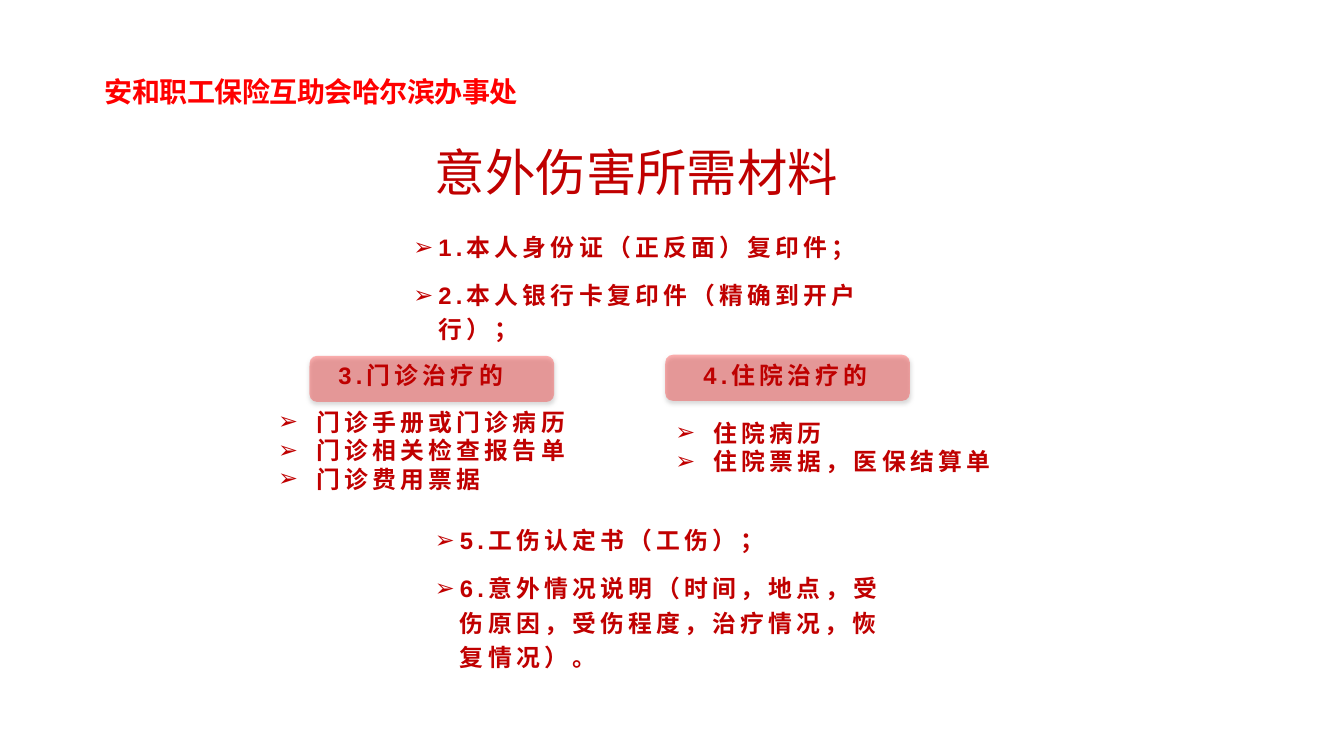
import lxml.etree
import pptx
import pptx.dml.color
import pptx.enum.shapes
import pptx.enum.text
import pptx.oxml.ns
import pptx.util

RED = "C00000"
CHINESE_FONT = "Noto Sans CJK SC"


def colour(value):
    return pptx.dml.color.RGBColor.from_string(value)


def add_element(parent, tag, **attributes):
    element = lxml.etree.SubElement(parent, pptx.oxml.ns.qn(tag))
    for name, value in attributes.items():
        element.set(name, str(value))
    return element


def add_shadow(parent, blur, distance, opacity):
    effects = add_element(parent, "a:effectLst")
    shadow = add_element(effects, "a:outerShdw", blurRad=pptx.util.Pt(blur),
                         dist=pptx.util.Pt(distance), dir=5400000, algn="t", rotWithShape=0)
    black = add_element(shadow, "a:srgbClr", val="000000")
    add_element(black, "a:alpha", val=opacity * 1000)
    return effects


class SlideBuilder:
    """Places elements by percentages of the slide's width and height."""

    def __init__(self, presentation, layout):
        self.presentation = presentation
        self.slide = presentation.slides.add_slide(layout)

    def lengths(self, box):
        width, height = self.presentation.slide_width, self.presentation.slide_height
        return [round(share * whole / 100) for share, whole in zip(box, (width, height) * 2)]

    def text(self, shape, lines, size=17, font="Arial", text_colour=RED, bold=True,
             tracking=3, line_spacing=1.0, gap=0, indent=None):
        frame = shape.text_frame
        frame.text = "\n".join(lines)
        frame.word_wrap = True
        frame.auto_size = pptx.enum.text.MSO_AUTO_SIZE.NONE
        frame.vertical_anchor = pptx.enum.text.MSO_ANCHOR.TOP
        for number, paragraph in enumerate(frame.paragraphs):
            paragraph.alignment = pptx.enum.text.PP_ALIGN.LEFT
            paragraph.line_spacing = line_spacing
            paragraph.space_before = pptx.util.Pt(gap if number else 0)
            properties = paragraph._p.get_or_add_pPr()
            if indent:
                properties.set("marL", str(pptx.util.Inches(indent)))
                properties.set("indent", str(-pptx.util.Inches(indent)))
                add_element(properties, "a:buFont", typeface="Arial")
                add_element(properties, "a:buChar", char="➢")
            paragraph.font.size = pptx.util.Pt(size)
            paragraph.font.bold = bold
            paragraph.font.name = font
            paragraph.font.color.rgb = colour(text_colour)
            defaults = properties.find(pptx.oxml.ns.qn("a:defRPr"))
            defaults.set("spc", str(round(tracking * 100)))
            add_element(defaults, "a:ea", typeface=font)

    def place(self, shape, box):
        shape.left, shape.top, shape.width, shape.height = self.lengths(box)

    def title(self, box, words):
        title = self.slide.shapes.title
        self.place(title, box)
        self.text(title, [words], size=36, font=CHINESE_FONT, bold=False,
                  tracking=0, line_spacing=0.9)

    def bullets(self, index, box, lines, **style):
        body = self.slide.placeholders[index]
        self.place(body, box)
        self.text(body, lines, **style)

    def label(self, box, words, **style):
        label = self.slide.shapes.add_textbox(*self.lengths(box))
        self.text(label, [words], **style)
        return label

    def header(self, box, words):
        header = self.label(box, words, size=20, font=CHINESE_FONT,
                            text_colour="FF0000", tracking=-0.4)
        defaults = header.text_frame.paragraphs[0]._p.pPr.find(pptx.oxml.ns.qn("a:defRPr"))
        effects = add_shadow(defaults, blur=3, distance=2, opacity=50)
        defaults.find(pptx.oxml.ns.qn("a:solidFill")).addnext(effects)

    def pill(self, box):
        pill = self.slide.shapes.add_shape(
            pptx.enum.shapes.MSO_SHAPE.ROUNDED_RECTANGLE, *self.lengths(box))
        pill.fill.solid()
        pill.fill.fore_color.rgb = colour("FF0000")
        pill.line.fill.background()
        fill = pill._element.spPr.find(pptx.oxml.ns.qn("a:solidFill"))
        add_element(fill[0], "a:alpha", val=30000)
        add_shadow(pill._element.spPr, blur=3, distance=2, opacity=50)


def main():
    presentation = pptx.Presentation()
    presentation.slide_width = pptx.util.Inches(13.33)
    presentation.slide_height = pptx.util.Inches(7.5)
    builder = SlideBuilder(presentation, presentation.slide_layouts.get_by_name("Comparison"))

    # Header and title
    builder.header((7.05, 9.2, 34, 5.9), "安和职工保险互助会哈尔滨办事处")
    builder.title((31.6, 18.93, 42, 12.1), "意外伤害所需材料")

    # Materials needed in every case
    wide = {"line_spacing": 1.2, "gap": 10, "indent": 0.25}
    builder.bullets(1, (30, 29.33, 38.85, 17.9),
                    ["1.本人身份证（正反面）复印件；", "2.本人银行卡复印件（精确到开户行）；"], **wide)
    builder.bullets(3, (31.6, 68.13, 35.3, 25.3),
                    ["5.工伤认定书（工伤）；",
                     "6.意外情况说明（时间，地点，受伤原因，受伤程度，治疗情况，恢复情况）。"], **wide)

    # Materials by kind of treatment
    treatments = [
        (2, "3.门诊治疗的", 24.45, (23.03, 47.07), (19.95, 53.2, 30.6, 12.8),
         ["门诊手册或门诊病历", "门诊相关检查报告单", "门诊费用票据"]),
        (4, "4.住院治疗的", 51.6, (49.5, 46.93), (49.5, 54.67, 28.9, 8.93),
         ["住院病历", "住院票据，医保结算单"]),
    ]
    for index, name, label_left, pill_corner, list_box, lines in treatments:
        builder.label((label_left, 47.07, 16.9, 5.2), name)
        builder.pill((*pill_corner, 18.2, 6.1))
        builder.bullets(index, list_box, lines, indent=0.38)

    presentation.save("out.pptx")


if __name__ == "__main__":
    main()
